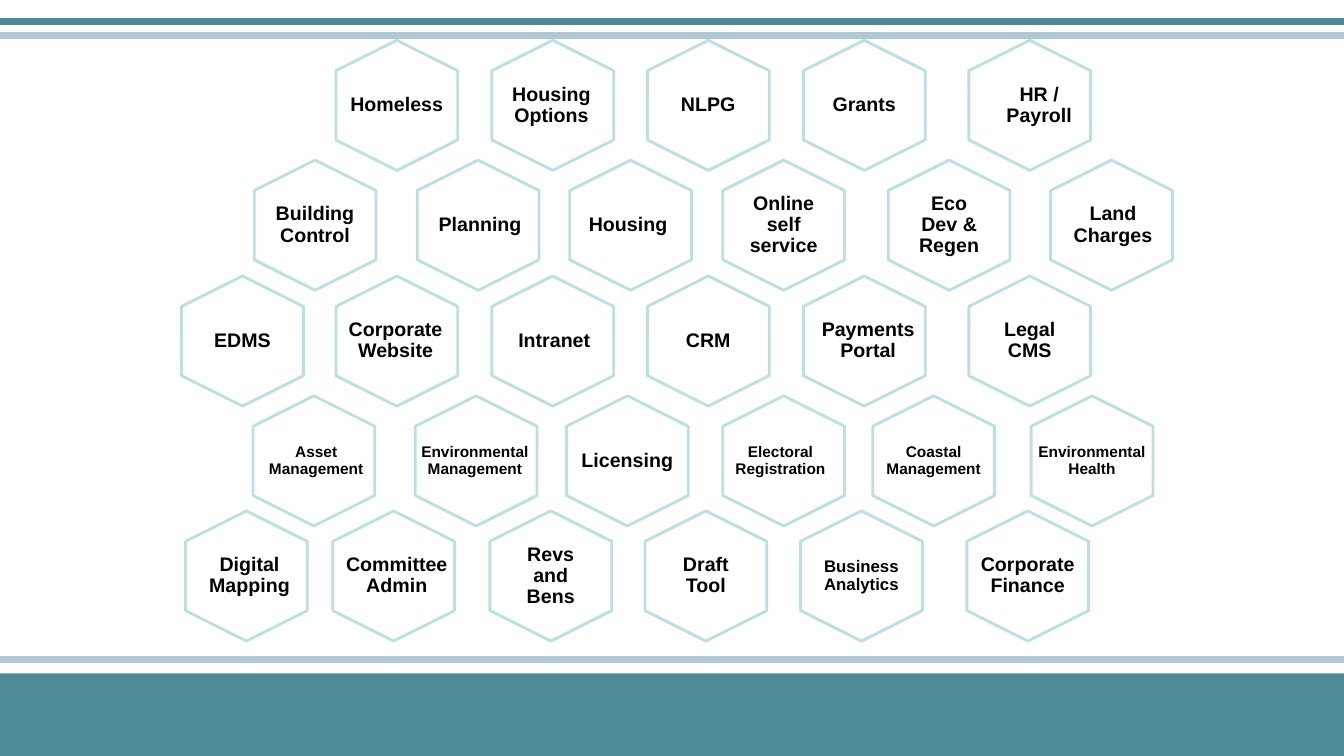
from lxml import etree
from pptx import Presentation
from pptx.dml.color import RGBColor
from pptx.enum.shapes import MSO_CONNECTOR, MSO_SHAPE
from pptx.enum.text import MSO_ANCHOR, PP_ALIGN
from pptx.oxml.ns import qn
from pptx.util import Cm, Pt

STRAIGHT = MSO_CONNECTOR.STRAIGHT
RECTANGLE, HEXAGON = MSO_SHAPE.RECTANGLE, MSO_SHAPE.HEXAGON
MIDDLE, CENTER = MSO_ANCHOR.MIDDLE, PP_ALIGN.CENTER

COLORS = {"teal": "4E8A95", "mist": "AEC8D5", "cell": "BBE0E3", "text": "000000"}

# Rows of services: top of the row, then
# (service, cell left, label width, label shift, font size), lengths in cm
SERVICE_ROWS = [
    (1.12, [
        ("Homeless", 8.36, 3.02, 0, 14),
        ("Housing Options", 12.29, 3.02, -0.03, 14),
        ("NLPG", 16.21, 2.11, 0, 14),
        ("Grants", 20.14, 2.11, 0, 14),
        ("HR / Payroll", 24.31, 2.54, 0.24, 14),
    ]),
    (4.14, [
        ("Building Control", 6.3, 2.74, 0, 14),
        ("Planning", 10.41, 3.02, 0.05, 14),
        ("Housing", 14.25, 2.59, -0.06, 14),
        ("Online self service", 18.11, 2.11, 0, 14),
        ("Eco Dev & Regen", 22.28, 2.11, 0, 14),
        ("Land Charges", 26.37, 2.59, 0.04, 14),
    ]),
    (7.06, [
        ("EDMS", 4.47, 2.11, 0, 14),
        ("Corporate Website", 8.36, 3.02, -0.03, 14),
        ("Intranet", 12.29, 2.9, 0.04, 14),
        ("CRM", 16.21, 2.11, 0, 14),
        ("Payments Portal", 20.14, 2.46, 0.1, 14),
        ("Legal CMS", 24.31, 2.11, 0, 14),
    ]),
    (10.08, [
        ("Asset Management", 6.27, 3.51, 0.06, 11),
        ("Environmental Management", 10.36, 3.28, -0.03, 11),
        ("Licensing", 14.17, 2.59, 0, 14),
        ("Electoral Registration", 18.11, 2.92, -0.08, 11),
        ("Coastal Management", 21.89, 3.07, 0, 11),
        ("Environmental Health", 25.88, 3.61, 0, 11),
    ]),
    (12.98, [
        ("Digital Mapping", 4.57, 2.72, 0.08, 14),
        ("Committee Admin", 8.28, 3.33, 0.08, 14),
        ("Revs and Bens", 12.24, 2.11, 0, 14),
        ("Draft Tool", 16.15, 2.11, 0, 14),
        ("Business Analytics", 20.07, 2.9, 0, 12),
        ("Corporate Finance", 24.26, 2.9, 0, 14),
    ]),
]
NO_MARGIN = {"Online self service", "Payments Portal", "Licensing"}

# Horizontal rules: height on the slide in cm, colour
RULES = [(16.61, "mist"), (0.89, "mist"), (0.53, "teal")]

SLIDE_W, SLIDE_H = 33.87, 19.05
FOOTER_TOP = 16.97
CELL_W, CELL_H = 3.28, 3.07
LABEL_H = 2.26
MARGIN = 0.25


def rgb(name):
    return RGBColor.from_string(COLORS[name])


def add_rule(y, color):
    rule = slide.shapes.add_connector(STRAIGHT, 0, Cm(y), Cm(SLIDE_W), Cm(y))
    rule.line.color.rgb = rgb(color)
    rule.line.width = Pt(5)
    etree.SubElement(rule._element.spPr, qn("a:effectLst"))


def add_cell(left, top):
    cell = slide.shapes.add_shape(HEXAGON, Cm(left), Cm(top), Cm(CELL_W), Cm(CELL_H))
    cell.rotation = 90
    cell.shadow.inherit = False
    cell.fill.background()
    cell.line.color.rgb = rgb("cell")
    cell.line.width = Pt(2)


def add_label(service, center, top, width, size):
    label = slide.shapes.add_textbox(
        Cm(center - width / 2), Cm(top), Cm(width), Cm(LABEL_H))
    frame = label.text_frame
    frame.word_wrap = True
    frame.vertical_anchor = MIDDLE
    margin = Cm(0 if service in NO_MARGIN else MARGIN)
    frame.margin_left = frame.margin_right = margin
    frame.margin_top = frame.margin_bottom = margin
    paragraph = frame.paragraphs[0]
    paragraph.text = service
    paragraph.alignment = CENTER
    paragraph.line_spacing = 0.9
    paragraph.font.name = "Arial"
    paragraph.font.size = Pt(size)
    paragraph.font.bold = True
    paragraph.font.color.rgb = rgb("text")


prs = Presentation()
prs.slide_width, prs.slide_height = Cm(SLIDE_W), Cm(SLIDE_H)
slide = prs.slides.add_slide(prs.slide_layouts[6])

# Footer band and rules
footer = slide.shapes.add_shape(
    RECTANGLE, 0, Cm(FOOTER_TOP), Cm(SLIDE_W), Cm(SLIDE_H - FOOTER_TOP))
footer.shadow.inherit = False
footer.fill.solid()
footer.fill.fore_color.rgb = rgb("teal")
footer.line.fill.background()
for y, color in RULES:
    add_rule(y, color)

# Honeycomb of services
for row_top, services in SERVICE_ROWS:
    for service, left, width, shift, size in services:
        add_cell(left, row_top)
        add_label(service, left + CELL_W / 2 + shift,
                  row_top + (CELL_H - LABEL_H) / 2, width, size)

prs.save("out.pptx")
